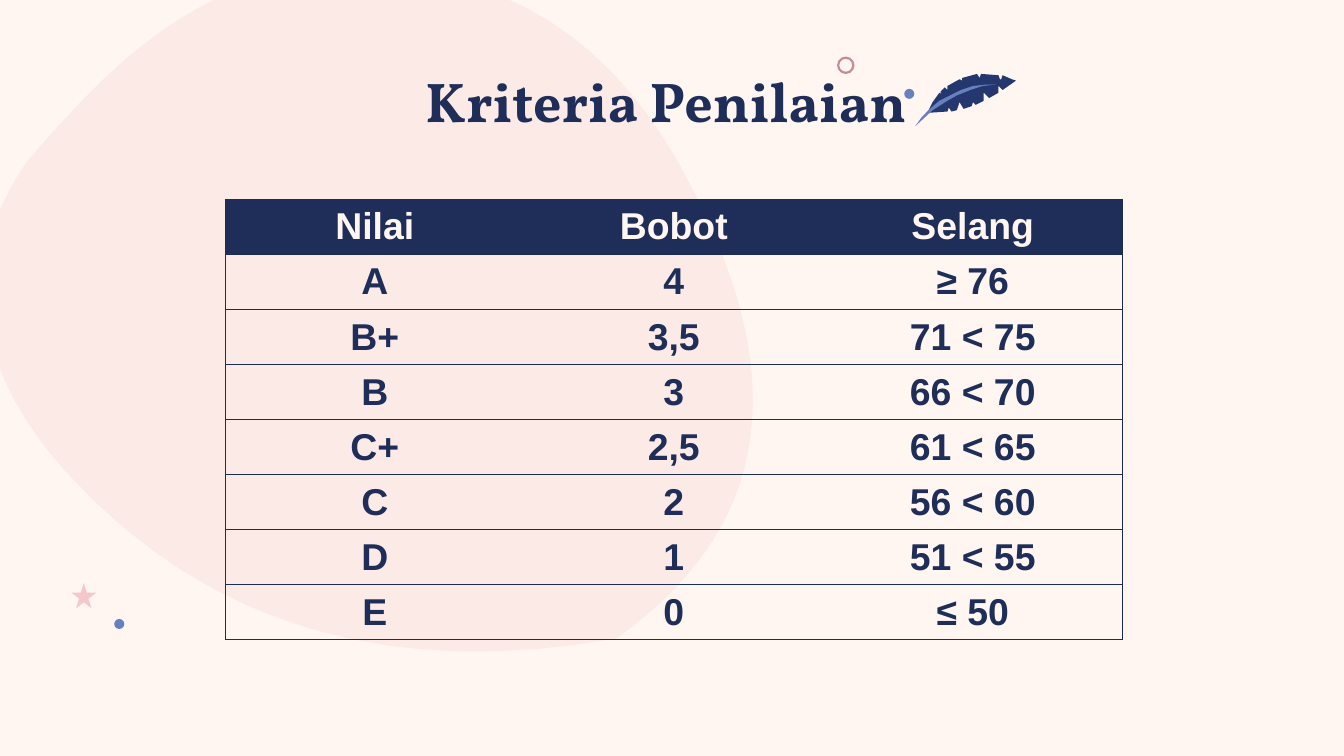
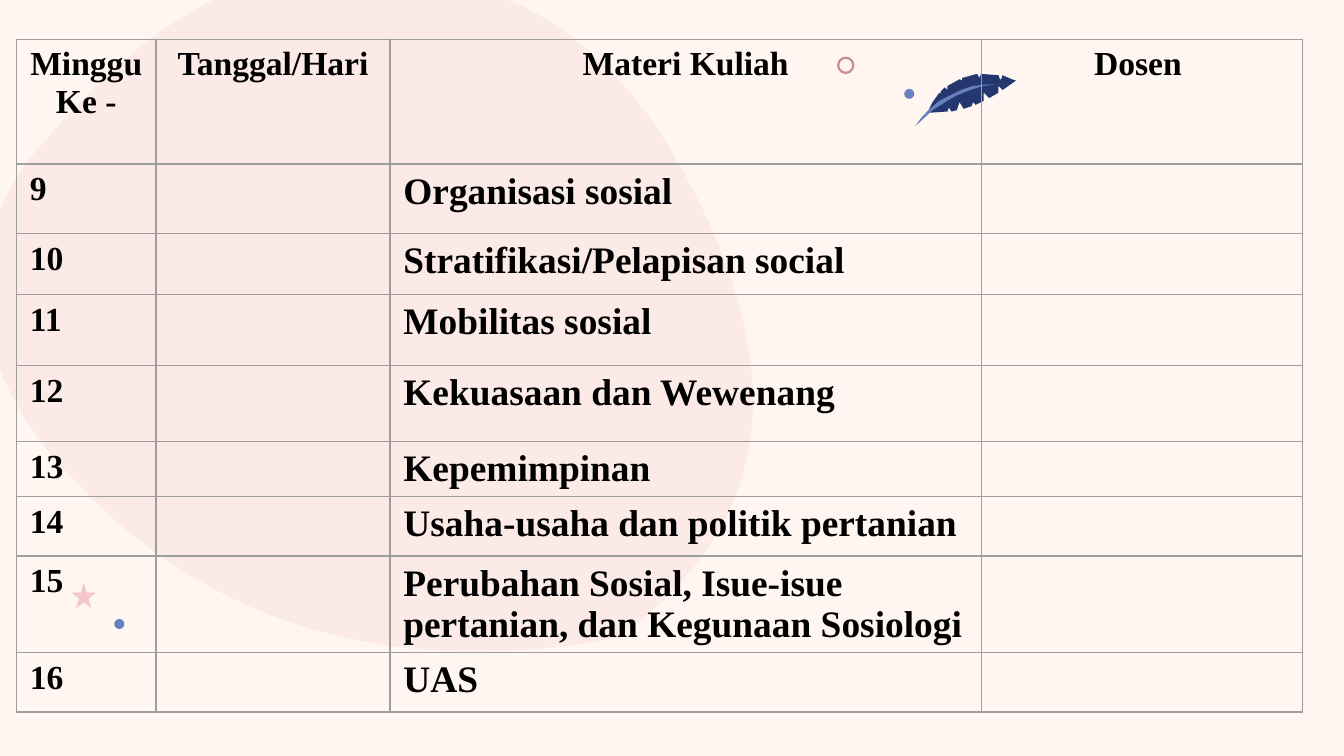
from dataclasses import dataclass
from typing import NamedTuple, Optional, Sequence

import lxml.etree
import pptx
import pptx.dml.color
import pptx.enum.shapes
import pptx.enum.text
import pptx.oxml.ns
import pptx.util

Cm = pptx.util.Cm
Pt = pptx.util.Pt
qn = pptx.oxml.ns.qn
SHAPE = pptx.enum.shapes.MSO_SHAPE
ALIGN = pptx.enum.text.PP_ALIGN
ANCHOR = pptx.enum.text.MSO_ANCHOR


@dataclass(frozen=True)
class Theme:
    cream: str = "FFF5F1"
    blush: str = "FCEAE7"
    pink: str = "F4C7CA"
    rose: str = "C78A97"
    navy: str = "1E2E58"
    navy_line: str = "1C2C57"
    feather: str = "24386F"
    blue: str = "6880BE"
    gray: str = "9E9E9E"
    black: str = "000000"
    title_font: str = "Vollkorn"
    grade_font: str = "Arial"
    schedule_font: str = "Times New Roman"
    title_size: int = 30
    large: int = 20
    medium: int = 18
    border: float = 0.75


THEME = Theme()
GRID = Cm(0.0254)  # unit of the outline coordinates below


class Ornament(NamedTuple):
    kind: SHAPE
    left: float
    top: float
    width: float
    height: float
    color: str


class Outline(NamedTuple):
    points: Sequence[tuple[float, float]]
    color: str


class CellStyle(NamedTuple):
    font: str
    size: int
    color: str
    align: ALIGN
    fill: Optional[str] = None


ORNAMENTS = [
    Ornament(SHAPE.DONUT, 15.82, 1.07, 0.33, 0.33, THEME.rose),
    Ornament(SHAPE.OVAL, 17.09, 1.68, 0.19, 0.19, THEME.blue),
    Ornament(SHAPE.STAR_5_POINT, 1.35, 11.02, 0.47, 0.48, THEME.pink),
    Ornament(SHAPE.OVAL, 2.16, 11.7, 0.19, 0.19, THEME.blue),
]

BLOB_START = (559, 320)
BLOB_CURVES = [
    ((565, 265), (548, 205), (516, 142)),
    ((460, 30), (374, -29), (247, -22)),
    ((146, -17), (83, 48), (22, 118)),
    ((2, 145), (-8, 173), (-11, 199)),
    ((-17, 254), (9, 306), (48, 350)),
    ((158, 472), (300, 504), (459, 475)),
    ((523, 429), (553, 377), (559, 320)),
]
FEATHER_VANE = [
    (753, 59), (746, 56), (745, 59), (744, 59), (743, 56), (730, 55), (729, 58),
    (727, 55), (716, 58), (716, 60), (714, 59), (705, 64), (705, 67), (703, 65),
    (700, 68), (700, 70), (699, 69), (694, 76), (690, 84), (705, 83), (706, 80),
    (708, 83), (712, 82), (714, 76), (717, 81), (723, 79), (724, 76), (726, 78),
    (732, 75), (732, 69), (736, 73), (743, 69), (743, 64), (746, 67), (756, 60),
]
FEATHER_QUILL = [
    (741, 63), (733, 63), (724, 64), (715, 67), (707, 71), (699, 75), (692, 81),
    (686, 87), (681, 94), (694, 82), (705, 75), (712, 71), (722, 67), (731, 64),
]

GRADES = [
    ("Nilai", "Bobot", "Selang"),
    ("A", "4", "≥ 76"),
    ("B+", "3,5", "71 < 75"),
    ("B", "3", "66 < 70"),
    ("C+", "2,5", "61 < 65"),
    ("C", "2", "56 < 60"),
    ("D", "1", "51 < 55"),
    ("E", "0", "≤ 50"),
]
SCHEDULE_HEAD = ("Minggu\nKe -", "Tanggal/Hari", "Materi Kuliah", "Dosen ")
FIRST_WEEK = 9
TOPICS = [
    "Organisasi sosial",
    "Stratifikasi/Pelapisan social",
    "Mobilitas sosial",
    "Kekuasaan dan Wewenang",
    "Kepemimpinan",
    "Usaha-usaha dan politik pertanian",
    "Perubahan Sosial, Isue-isue pertanian, dan Kegunaan Sosiologi",
    "UAS",
]
SCHEDULE_COLS = (2.64, 4.42, 11.18, 6.07)
SCHEDULE_ROWS = (2.36, 1.32, 1.15, 1.34, 1.44, 1.04, 1.12, 1.83, 1.12)


def rgb(color: str) -> pptx.dml.color.RGBColor:
    return pptx.dml.color.RGBColor.from_string(color)


def sample_curves(start, curves, steps: int = 16) -> list[tuple[float, float]]:
    """Turn a chain of cubic Bézier curves into points."""
    points = [start]
    for c1, c2, end in curves:
        p0 = points[-1]
        for i in range(1, steps + 1):
            t = i / steps
            u = 1 - t
            points.append(tuple(
                u**3 * a + 3 * u * u * t * b + 3 * u * t * t * c + t**3 * d
                for a, b, c, d in zip(p0, c1, c2, end)))
    return points


def paint(sp, color: str) -> None:
    sp.shadow.inherit = False
    sp.fill.solid()
    sp.fill.fore_color.rgb = rgb(color)
    sp.line.fill.background()


def draw_outline(slide, outline: Outline):
    points = [(x * GRID, y * GRID) for x, y in outline.points]
    builder = slide.shapes.build_freeform(*points[0])
    builder.add_line_segments(points[1:], close=True)
    sp = builder.convert_to_shape()
    paint(sp, outline.color)
    return sp


def draw_ornament(slide, item: Ornament):
    sp = slide.shapes.add_shape(
        item.kind, Cm(item.left), Cm(item.top), Cm(item.width), Cm(item.height))
    if item.kind == SHAPE.DONUT:
        sp.adjustments[0] = 0.13
    paint(sp, item.color)
    return sp


def decorate_master(prs, slide) -> None:
    """Draw the shared decoration on a slide, then move it to the master."""
    master = prs.slide_master
    master.background.fill.solid()
    master.background.fill.fore_color.rgb = rgb(THEME.cream)
    outlines = [
        Outline(sample_curves(BLOB_START, BLOB_CURVES), THEME.blush),
        Outline(FEATHER_VANE, THEME.feather),
        Outline(FEATHER_QUILL, THEME.blue),
    ]
    shapes = [draw_outline(slide, outline) for outline in outlines]
    shapes += [draw_ornament(slide, item) for item in ORNAMENTS]
    for number, sp in enumerate(shapes, start=100):
        sp.element.nvSpPr.cNvPr.set("id", str(number))
        master.shapes.element.append(sp.element)


def format_text(tf, style: CellStyle) -> None:
    for p in tf.paragraphs:
        p.alignment = style.align
        for r in p.runs:
            r.font.name = style.font
            r.font.size = Pt(style.size)
            r.font.bold = True
            r.font.color.rgb = rgb(style.color)


def set_borders(cell, colors: Sequence[Optional[str]]) -> None:
    """Set the left, right, top and bottom borders; None hides one."""
    tcPr = cell._tc.get_or_add_tcPr()
    for i, (side, color) in enumerate(zip("LRTB", colors)):
        ln = lxml.etree.Element(qn(f"a:ln{side}"), w=str(Pt(THEME.border)))
        if color is None:
            lxml.etree.SubElement(ln, qn("a:noFill"))
        else:
            fill = lxml.etree.SubElement(ln, qn("a:solidFill"))
            lxml.etree.SubElement(fill, qn("a:srgbClr"), val=color)
        tcPr.insert(i, ln)


def fill_cell(cell, text: str, style: CellStyle, borders) -> None:
    cell.text_frame.text = text
    format_text(cell.text_frame, style)
    if style.fill:
        cell.fill.solid()
        cell.fill.fore_color.rgb = rgb(style.fill)
    else:
        cell.fill.background()
    set_borders(cell, borders)


def add_sized_table(slide, left: float, top: float,
                    widths: Sequence[float], heights: Sequence[float]):
    frame = slide.shapes.add_table(
        len(heights), len(widths), Cm(left), Cm(top), Cm(sum(widths)), Cm(sum(heights)))
    table = frame.table
    table.first_row = table.horz_banding = False
    for column, width in zip(table.columns, widths):
        column.width = Cm(width)
    for row, height in zip(table.rows, heights):
        row.height = Cm(height)
    return table


def build_grades(slide) -> None:
    title = slide.shapes.title
    title.left, title.top, title.width, title.height = Cm(2), Cm(1), Cm(21.39), Cm(1.6)
    tf = title.text_frame
    tf.text = "Kriteria Penilaian "
    tf.auto_size = pptx.enum.text.MSO_AUTO_SIZE.NONE
    tf.vertical_anchor = ANCHOR.TOP
    tf.margin_left = tf.margin_right = tf.margin_top = tf.margin_bottom = Cm(0.25)
    format_text(tf, CellStyle(THEME.title_font, THEME.title_size, THEME.navy, ALIGN.CENTER))

    head = CellStyle(THEME.grade_font, THEME.large, THEME.cream, ALIGN.CENTER, THEME.navy)
    body = head._replace(color=THEME.navy, fill=None)
    line = THEME.navy_line
    table = add_sized_table(slide, 4.26, 3.77, [5.65] * 3, [1.04] * len(GRADES))
    for i, row in enumerate(GRADES):
        for j, text in enumerate(row):
            cell = table.cell(i, j)
            cell.margin_top = cell.margin_bottom = Cm(0.1)
            cell.vertical_anchor = ANCHOR.MIDDLE
            borders = (line if j == 0 else None, line if j == len(row) - 1 else None, line, line)
            fill_cell(cell, text, head if i == 0 else body, borders)


def build_schedule(slide) -> None:
    head = CellStyle(THEME.schedule_font, THEME.medium, THEME.black, ALIGN.CENTER)
    week = head._replace(align=ALIGN.LEFT)
    topic = week._replace(size=THEME.large)
    rows = [SCHEDULE_HEAD]
    rows += [(str(n), "", text, "") for n, text in enumerate(TOPICS, start=FIRST_WEEK)]
    table = add_sized_table(slide, 0.31, 0.74, SCHEDULE_COLS, SCHEDULE_ROWS)
    for i, row in enumerate(rows):
        styles = [head] * 4 if i == 0 else [week, week, topic, week]
        for j, (text, style) in enumerate(zip(row, styles)):
            fill_cell(table.cell(i, j), text, style, [THEME.gray] * 4)


def main() -> None:
    prs = pptx.Presentation()
    prs.slide_width, prs.slide_height = Cm(25.4), Cm(14.29)
    title_only, blank = prs.slide_layouts[5], prs.slide_layouts[6]
    grades = prs.slides.add_slide(title_only)
    decorate_master(prs, grades)
    build_grades(grades)
    build_schedule(prs.slides.add_slide(blank))
    prs.save("out.pptx")


if __name__ == "__main__":
    main()
